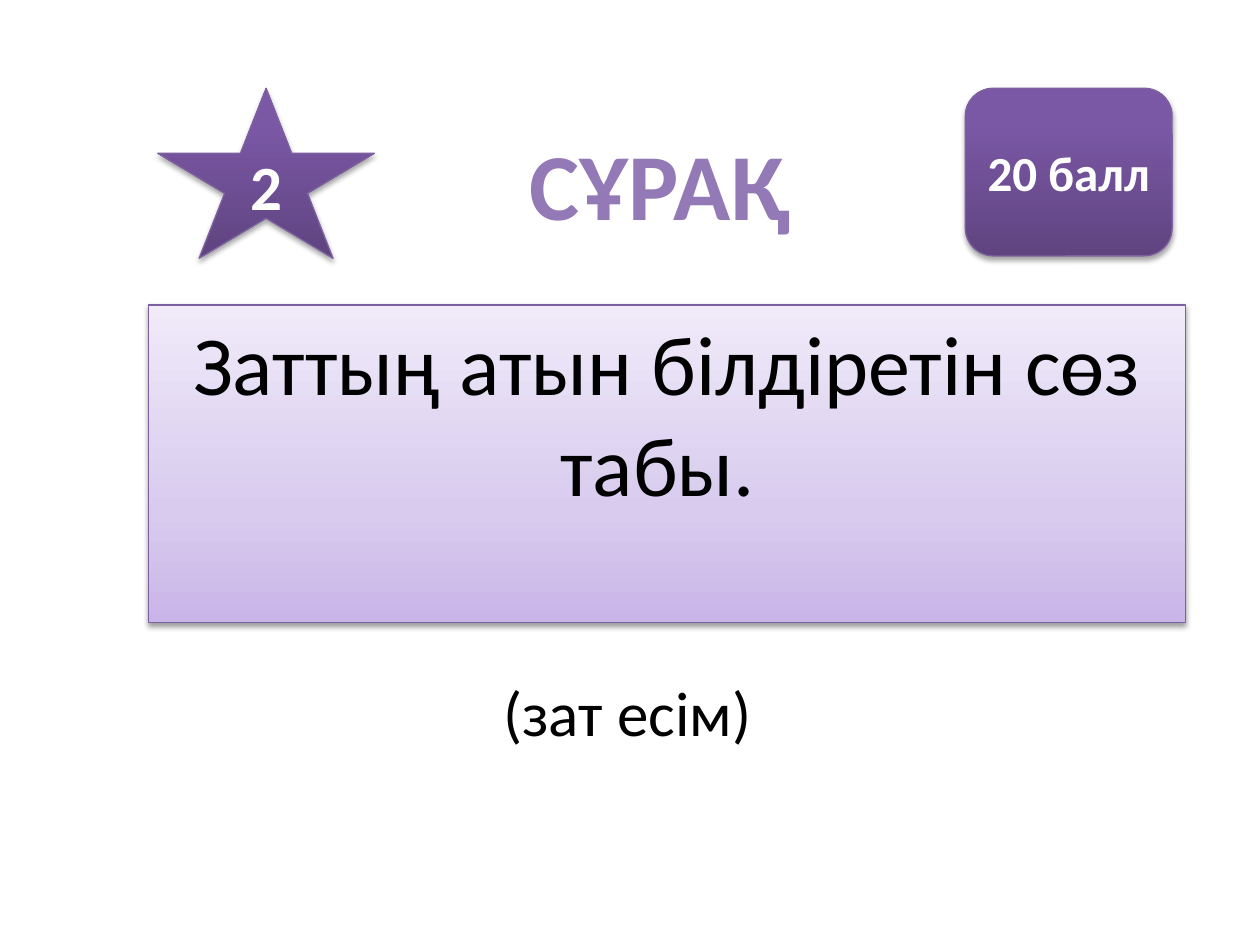
import copy

import lxml.etree
import pptx
import pptx.dml.color
import pptx.enum.shapes
import pptx.enum.text
import pptx.oxml.ns
import pptx.util

Cm = pptx.util.Cm
Pt = pptx.util.Pt
qn = pptx.oxml.ns.qn
SHAPES = pptx.enum.shapes.MSO_SHAPE
ANCHOR = pptx.enum.text.MSO_ANCHOR

THEME = {
    "font": "Calibri",
    "title": "9379B5",
    "text": "000000",
    "badge_text": "FFFFFF",
    "line": "7D60A0",
    "shadow": "000000",
    "panel": [(0, "C9B5E8"), (0.35, "D8CBEE"), (1, "F0EAF9")],
    "badge": [(0, "5F4480"), (0.8, "7B58A6"), (1, "7C57A8")],
    "title_size": 54,
    "question_size": 48,
    "answer_size": 36,
    "star_size": 36,
    "score_size": 28,
}


def style_shape(shape, stops, shadow_alpha, shadow_distance):
    """Give a shape a vertical gradient, a thin outline and a soft shadow."""
    shape.fill.gradient()
    shape.fill.gradient_angle = 90
    stop_list = shape.element.spPr.find(".//" + qn("a:gsLst"))
    while len(stop_list) < len(stops):
        stop_list.append(copy.deepcopy(stop_list[0]))
    for stop, (position, color) in zip(shape.fill.gradient_stops, stops):
        stop.position = position
        stop.color.rgb = pptx.dml.color.RGBColor.from_string(color)
    shape.line.color.rgb = pptx.dml.color.RGBColor.from_string(THEME["line"])
    shape.line.width = Pt(0.75)

    shape.shadow.inherit = False
    effects = shape.element.spPr.find(qn("a:effectLst"))
    shadow = lxml.etree.SubElement(
        effects, qn("a:outerShdw"), blurRad=str(Pt(3.1)),
        dist=str(Pt(shadow_distance)), dir="5400000", rotWithShape="0")
    color = lxml.etree.SubElement(shadow, qn("a:srgbClr"), val=THEME["shadow"])
    lxml.etree.SubElement(color, qn("a:alpha"), val=str(shadow_alpha * 1000))


def write_text(shape, text, size, color, bold=False, anchor=ANCHOR.MIDDLE):
    """Write one centred paragraph and format its run."""
    frame = shape.text_frame
    frame.text = text
    frame.word_wrap = True
    frame.auto_size = pptx.enum.text.MSO_AUTO_SIZE.NONE
    frame.vertical_anchor = anchor
    paragraph = frame.paragraphs[0]
    paragraph.alignment = pptx.enum.text.PP_ALIGN.CENTER
    paragraph.space_before = Pt(0)
    font = paragraph.runs[0].font
    font.name = THEME["font"]
    font.size = Pt(THEME[size])
    font.bold = bold
    font.color.rgb = pptx.dml.color.RGBColor.from_string(THEME[color])


presentation = pptx.Presentation()
presentation.slide_width = Cm(25.4)
presentation.slide_height = Cm(19.05)
slide = presentation.slides.add_slide(presentation.slide_layouts[1])

# Title
title = slide.shapes.title
title.left, title.top, title.width, title.height = Cm(10.39), Cm(2.39), Cm(5.79), Cm(2.57)
write_text(title, "СҰРАҚ", "title_size", "title", bold=True)
title.text_frame.word_wrap = False

# Question panel
question = slide.placeholders[1]
question.left, question.top, question.width, question.height = Cm(3), Cm(6.15), Cm(20.9), Cm(6.4)
style_shape(question, THEME["panel"], 38, 1.6)
write_text(question, "Заттың атын білдіретін сөз табы. ", "question_size", "text",
           anchor=ANCHOR.TOP)
properties = question.text_frame.paragraphs[0]._p.get_or_add_pPr()
properties.set("marL", "0")
properties.set("indent", "0")
lxml.etree.SubElement(properties, qn("a:buNone"))

# Answer, raised and shifted left by its insets
answer = slide.shapes.add_textbox(Cm(4.29), Cm(12.52), Cm(17.27), Cm(4.95))
write_text(answer, "(зат есім)", "answer_size", "text")
answer.text_frame.margin_right = Cm(0.8)
answer.text_frame.margin_bottom = Cm(1.45)

# Score and question number badges
badges = [
    (SHAPES.ROUNDED_RECTANGLE, 19.46, 4.17, 3.38, "20 балл", "score_size"),
    (SHAPES.STAR_5_POINT, 3.18, 4.37, 3.43, "2", "star_size"),
]
for kind, left, width, height, text, size in badges:
    badge = slide.shapes.add_shape(kind, Cm(left), Cm(1.78), Cm(width), Cm(height))
    style_shape(badge, THEME["badge"], 35, 1.8)
    write_text(badge, text, size, "badge_text", bold=True)

presentation.save("out.pptx")
